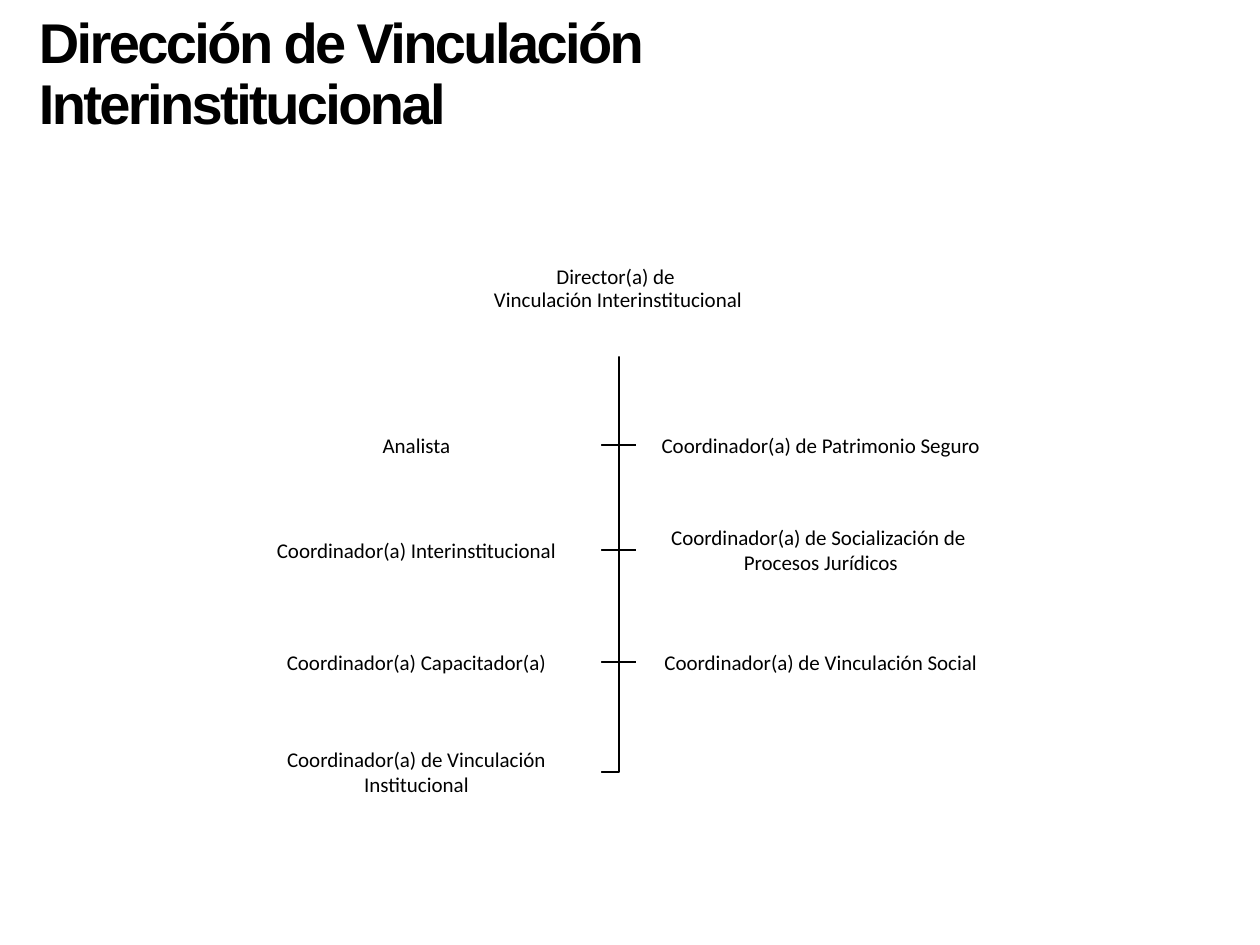
"""Build the organisation chart of the Dirección de Vinculación Interinstitucional."""
from dataclasses import dataclass

from pptx import Presentation
from pptx.dml.color import RGBColor
from pptx.enum.shapes import MSO_SHAPE
from pptx.enum.text import MSO_ANCHOR, MSO_AUTO_SIZE, PP_ALIGN
from pptx.shapes.autoshape import Shape
from pptx.slide import Slide
from pptx.text.text import TextFrame
from pptx.util import Pt


@dataclass(frozen=True)
class Theme:
    """Colours, fonts and sizes in points."""
    ink: RGBColor = RGBColor(0x00, 0x00, 0x00)
    paper: RGBColor = RGBColor(0xFF, 0xFF, 0xFF)
    title_font: str = "Arial"
    post_font: str = "Calibri"
    title_size: float = 32
    post_size: float = 12
    title_tracking: float = -1.5
    branch_width: float = 1
    post_inset: float = 0.7
    tight_spacing: float = 0.9


@dataclass(frozen=True)
class Post:
    """A post in the chart: its lines of text and its box in points."""
    lines: tuple[str, ...]
    left: float
    middle: float
    width: float = 211
    height: float = 49.7

    @property
    def top(self) -> float:
        """Return the upper edge of the box."""
        return self.middle - self.height / 2


THEME = Theme()
TITLE = "Dirección de Vinculación Interinstitucional"
TRUNK = 353.5
LEFT, RIGHT = 132.5, 363.6
ROWS = (254.5, 314.2, 378.2, 441)

DIRECTOR = Post(("Director(a) de ", "Vinculación Interinstitucional"),
                left=262.8, middle=165.2, width=180.7, height=77)
STAFF = (
    Post(("Analista",), LEFT, ROWS[0]),
    Post(("Coordinador(a) de Patrimonio Seguro",), RIGHT, ROWS[0]),
    Post(("Coordinador(a) Interinstitucional",), LEFT, ROWS[1]),
    Post(("Coordinador(a) de Socialización de ", "Procesos Jurídicos"), RIGHT, ROWS[1]),
    Post(("Coordinador(a) Capacitador(a)",), LEFT, ROWS[2]),
    Post(("Coordinador(a) de Vinculación Social",), RIGHT, ROWS[2], height=41),
    Post(("Coordinador(a) de Vinculación Institucional",), LEFT, ROWS[3]),
)


def write_title(slide: Slide) -> None:
    """Place and format the title placeholder."""
    title = slide.shapes.title
    title.left, title.top, title.width, title.height = Pt(15), Pt(9.4), Pt(546.5), Pt(67.7)
    frame = title.text_frame
    frame.word_wrap = True
    frame.auto_size = MSO_AUTO_SIZE.NONE
    frame.vertical_anchor = MSO_ANCHOR.MIDDLE
    paragraph = frame.paragraphs[0]
    paragraph.alignment = PP_ALIGN.LEFT
    paragraph.line_spacing = THEME.tight_spacing
    run = paragraph.add_run()
    run.text = TITLE
    run.font.name = THEME.title_font
    run.font.size = Pt(THEME.title_size)
    run.font.bold = True
    run.font.color.rgb = THEME.ink
    run.font._element.set("spc", str(round(THEME.title_tracking * 100)))


def write_post(frame: TextFrame, lines: tuple[str, ...], spacing: float) -> None:
    """Write the centred lines of a post."""
    frame.word_wrap = True
    frame.vertical_anchor = MSO_ANCHOR.MIDDLE
    frame.margin_left = frame.margin_right = Pt(THEME.post_inset)
    frame.margin_top = frame.margin_bottom = Pt(THEME.post_inset)
    paragraph = frame.paragraphs[0]
    paragraph.alignment = PP_ALIGN.CENTER
    paragraph.line_spacing = spacing
    for index, line in enumerate(lines):
        if index:
            paragraph.add_line_break()
        run = paragraph.add_run()
        run.text = line
        run.font.name = THEME.post_font
        run.font.size = Pt(THEME.post_size)
        run.font.color.rgb = THEME.ink


def draw_branch(slide: Slide, post: Post) -> Shape:
    """Draw the elbow from the director down the trunk to a post."""
    edge = post.left + post.width if post.left < TRUNK else post.left
    start = DIRECTOR.top + DIRECTOR.height
    builder = slide.shapes.build_freeform(Pt(TRUNK), Pt(start))
    corners = [(Pt(TRUNK), Pt(post.middle)), (Pt(edge), Pt(post.middle))]
    builder.add_line_segments(corners, close=False)
    branch = builder.convert_to_shape()
    branch.shadow.inherit = False
    branch.fill.background()
    branch.line.color.rgb = THEME.ink
    branch.line.width = Pt(THEME.branch_width)
    return branch


def draw_post(slide: Slide, post: Post, spacing: float = 1.0) -> Shape:
    """Draw the box of a post with its text."""
    box = slide.shapes.add_shape(MSO_SHAPE.RECTANGLE, Pt(post.left), Pt(post.top),
                                 Pt(post.width), Pt(post.height))
    box.shadow.inherit = False
    box.fill.solid()
    box.fill.fore_color.rgb = THEME.paper
    box.line.fill.background()
    write_post(box.text_frame, post.lines, spacing)
    return box


def main() -> None:
    """Build and save the slide."""
    deck = Presentation()
    deck.slide_width, deck.slide_height = Pt(720), Pt(540)
    slide = deck.slides.add_slide(deck.slide_layouts[5])
    write_title(slide)
    for post in reversed(STAFF):
        draw_branch(slide, post)
    draw_post(slide, DIRECTOR, THEME.tight_spacing)
    for post in STAFF:
        draw_post(slide, post)
    deck.save("out.pptx")


if __name__ == "__main__":
    main()
